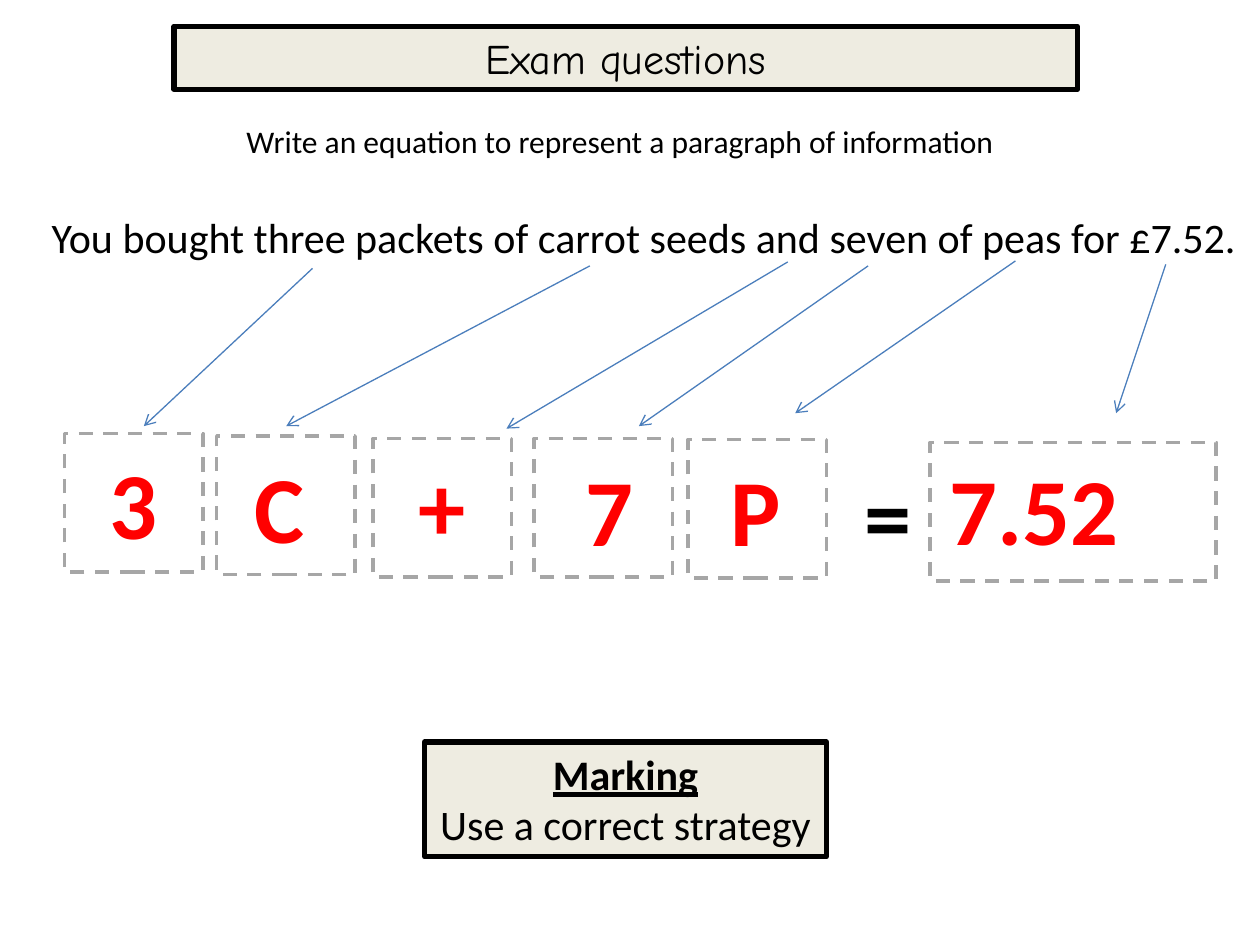
from lxml.etree import SubElement
from pptx import Presentation
from pptx.dml.color import RGBColor
from pptx.enum.dml import MSO_LINE_DASH_STYLE as Dash
from pptx.enum.shapes import MSO_CONNECTOR as Connector, MSO_SHAPE as Preset
from pptx.enum.text import MSO_ANCHOR as Anchor, MSO_AUTO_SIZE as AutoSize, PP_ALIGN as Align
from pptx.oxml.ns import qn
from pptx.util import Cm, Pt

COLOURS = {"ink": "000000", "answer": "FF0000", "panel": "EEECE1",
           "arrow": "4B7EBC", "tile": "A6A6A6"}
TILE_SIZE = 2.79
SYMBOL_HEIGHT = 2.57
TILES = [(1.3, 8.74, TILE_SIZE), (4.37, 8.79, TILE_SIZE), (7.52, 8.84, TILE_SIZE),
         (10.77, 8.84, TILE_SIZE), (13.87, 8.86, TILE_SIZE), (18.75, 8.92, 5.77)]
SYMBOLS = [("3", 1.96, 8.84, 1.5, "answer"), ("C", 4.88, 8.92, 1.52, "answer"),
           ("+", 8.18, 8.89, 1.47, "answer"), ("7", 11.56, 8.99, 1.5, "answer"),
           ("P", 14.48, 8.99, 1.55, "answer"), ("=", 17.17, 9.09, 1.47, "ink"),
           ("7.52", 18.9, 8.97, 4.39, "answer")]
ARROWS = [(6.3, 5.41, 2.9, 8.59), (11.89, 5.36, 5.77, 8.59), (15.88, 5.28, 10.21, 8.64),
          (17.5, 5.36, 12.88, 8.59), (20.47, 5.26, 16.03, 8.33), (23.5, 5.33, 22.5, 8.33)]


def colour(name):
    """Return the named colour."""
    return RGBColor.from_string(COLOURS[name])


def write(para, text, font="Calibri", size=24, ink="ink", bold=False, underline=False,
          align=Align.LEFT):
    """Write formatted text into a paragraph."""
    para.alignment = align
    span = para.add_run()
    span.text = text
    span.font.name = font
    span.font.size = Pt(size)
    span.font.bold = bold
    span.font.underline = underline
    span.font.color.rgb = colour(ink)


def add_label(page, text, left, top, width, height, **style):
    """Add a single-line text box."""
    box = page.shapes.add_textbox(Cm(left), Cm(top), Cm(width), Cm(height))
    box.text_frame.word_wrap = False
    box.text_frame.auto_size = AutoSize.SHAPE_TO_FIT_TEXT
    write(box.text_frame.paragraphs[0], text, **style)


def style_panel(box):
    """Give a box the beige fill, heavy black border and a fixed size."""
    box.fill.solid()
    box.fill.fore_color.rgb = colour("panel")
    box.line.color.rgb = colour("ink")
    box.line.width = Pt(3)
    box.text_frame.word_wrap = True
    box.text_frame.auto_size = AutoSize.NONE
    box.text_frame.vertical_anchor = Anchor.TOP


def add_title(page, text):
    """Place and format the slide title."""
    title = page.shapes.title
    title.left, title.top, title.width, title.height = Cm(3.51), Cm(0.53), Cm(18.21), Cm(1.27)
    style_panel(title)
    write(title.text_frame.paragraphs[0], text, font="Comic Neue", align=Align.CENTER)


def add_rectangle(page, left, top, width, height):
    """Add a rectangle without a shadow."""
    box = page.shapes.add_shape(Preset.RECTANGLE, Cm(left), Cm(top), Cm(width), Cm(height))
    box.shadow.inherit = False
    return box


def add_marking(page):
    """Add the marking panel."""
    box = add_rectangle(page, 8.56, 14.96, 8.1, 2.31)
    style_panel(box)
    frame = box.text_frame
    write(frame.paragraphs[0], "Marking", bold=True, underline=True, align=Align.CENTER)
    write(frame.add_paragraph(), "Use a correct strategy", align=Align.CENTER)


def add_tile(page, left, top, width):
    """Add an empty dashed tile."""
    tile = add_rectangle(page, left, top, width, TILE_SIZE)
    tile.fill.background()
    tile.line.color.rgb = colour("tile")
    tile.line.width = Pt(2)
    tile.line.dash_style = Dash.DASH


def add_arrow(page, *ends):
    """Add a thin arrow from the sentence to a tile."""
    arrow = page.shapes.add_connector(Connector.STRAIGHT, *map(Cm, ends))
    arrow.line.color.rgb = colour("arrow")
    arrow.line.width = Pt(0.75)
    properties = arrow.element.spPr
    SubElement(properties.find(qn("a:ln")), qn("a:tailEnd"), type="arrow")
    SubElement(properties, qn("a:effectLst"))


def main():
    """Build and save the slide."""
    deck = Presentation()
    deck.slide_width, deck.slide_height = Cm(25.4), Cm(19.05)
    page = deck.slides.add_slide(deck.slide_layouts[5])
    add_title(page, "Exam questions")
    add_label(page, "Write an equation to represent a paragraph of information",
              4.72, 2.34, 15.77, 1.02, size=18)
    add_label(page, "You bought three packets of carrot seeds and seven of peas for £7.52.",
              0.79, 4.14, 24.61, 1.27)
    for ends in ARROWS:
        add_arrow(page, *ends)
    add_marking(page)
    for text, left, top, width, ink in SYMBOLS:
        add_label(page, text, left, top, width, SYMBOL_HEIGHT, size=54, ink=ink, bold=True)
    for place in TILES:
        add_tile(page, *place)
    deck.save("out.pptx")


if __name__ == "__main__":
    main()
